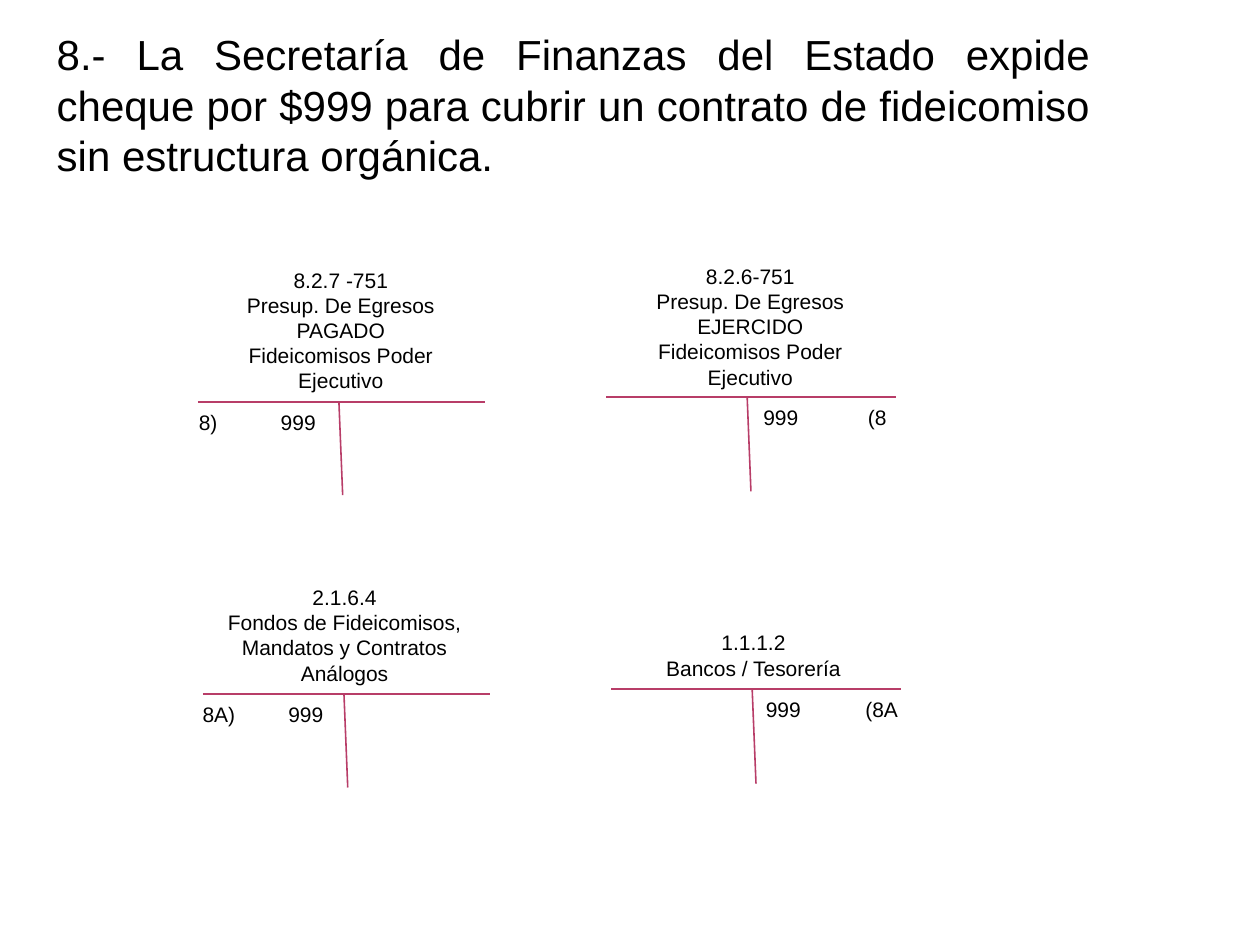
import pptx
import pptx.dml.color
import pptx.enum.shapes
import pptx.enum.text
import pptx.oxml
import pptx.oxml.ns
import pptx.util
from pptx.util import Inches

BLACK = pptx.dml.color.RGBColor(0x00, 0x00, 0x00)
RASPBERRY = pptx.dml.color.RGBColor(0xB8, 0x3D, 0x68)
ALIGN = pptx.enum.text.PP_ALIGN


def write_text(shape, text, size, alignment, tab_stops=()):
    shape.text_frame.word_wrap = True
    shape.text_frame.text = text
    for paragraph in shape.text_frame.paragraphs:
        paragraph.alignment = alignment
        if tab_stops:
            properties = paragraph._p.get_or_add_pPr()
            tab_list = pptx.oxml.parse_xml(
                f"<a:tabLst {pptx.oxml.ns.nsdecls('a')}/>")
            for stop in tab_stops:
                tab = tab_list.makeelement(pptx.oxml.ns.qn("a:tab"))
                tab.set("pos", str(Inches(stop)))
                tab.set("algn", "l")
                tab_list.append(tab)
            properties.append(tab_list)
        for run in paragraph.runs:
            run.font.name = "Arial"
            run.font.size = pptx.util.Pt(size)
            run.font.color.rgb = BLACK


def add_line(group, x1, y1, x2, y2):
    line = group.shapes.add_connector(
        pptx.enum.shapes.MSO_CONNECTOR.STRAIGHT,
        Inches(x1), Inches(y1), Inches(x2), Inches(y2))
    line.line.color.rgb = RASPBERRY
    line.line.width = pptx.util.Pt(0.9)
    line._element.spPr.append(
        pptx.oxml.parse_xml(f"<a:effectLst {pptx.oxml.ns.nsdecls('a')}/>"))


presentation = pptx.Presentation()
presentation.slide_width = Inches(10)
presentation.slide_height = Inches(7.5)
slide = presentation.slides.add_slide(presentation.slide_layouts[5])

title = slide.shapes.title
title.left, title.top = Inches(0.35), Inches(0.18)
title.width, title.height = Inches(8.4), Inches(2.12)
title.text_frame.auto_size = pptx.enum.text.MSO_AUTO_SIZE.NONE
title.text_frame.vertical_anchor = pptx.enum.text.MSO_ANCHOR.TOP
write_text(title, "8.- La Secretaría de Finanzas del Estado expide cheque por "
           "$999 para cubrir un contrato de fideicomiso sin estructura orgánica.",
           24, ALIGN.JUSTIFY)

# T accounts: bar left, bar y, bar width, stem height,
# heading box (left, top, width, height), heading,
# entry left, entry, entry tab stops
accounts = [
    (1.57, 3.19, 2.28, 0.74, (1.68, 2.07, 2.05, 1.11),
     "8.2.7 -751\nPresup. De Egresos PAGADO\nFideicomisos Poder Ejecutivo",
     1.02, "\t8)\t999", (0.46, 1.11)),
    (4.81, 3.15, 2.3, 0.75, (4.93, 2.04, 2.05, 1.11),
     "8.2.6-751\nPresup. De Egresos EJERCIDO\nFideicomisos Poder Ejecutivo",
     5.96, "999\t(8", (0.83,)),
    (1.61, 5.51, 2.28, 0.74, (1.71, 4.59, 2.05, 0.91),
     "2.1.6.4\nFondos de Fideicomisos, Mandatos y Contratos Análogos",
     1.05, "\t8A)\t999", (0.46, 1.14)),
    (4.85, 5.47, 2.3, 0.75, (4.92, 4.95, 2.12, 0.5),
     "1.1.1.2\nBancos / Tesorería",
     5.98, "999\t(8A", (0.79,)),
]

for (left, y, width, stem_height, heading_box, heading,
     entry_left, entry, tab_stops) in accounts:
    t_account = slide.shapes.add_group_shape()
    add_line(t_account, left, y, left + width, y)
    stem_x = left + 1.12
    add_line(t_account, stem_x, y, stem_x + 0.03, y + stem_height)

    heading_shape = slide.shapes.add_textbox(*map(Inches, heading_box))
    write_text(heading_shape, heading, 12, ALIGN.CENTER)

    entry_shape = slide.shapes.add_textbox(
        Inches(entry_left), Inches(y + 0.01), Inches(1.64), Inches(0.5))
    write_text(entry_shape, entry, 12, ALIGN.LEFT, tab_stops)

presentation.save("out.pptx")
